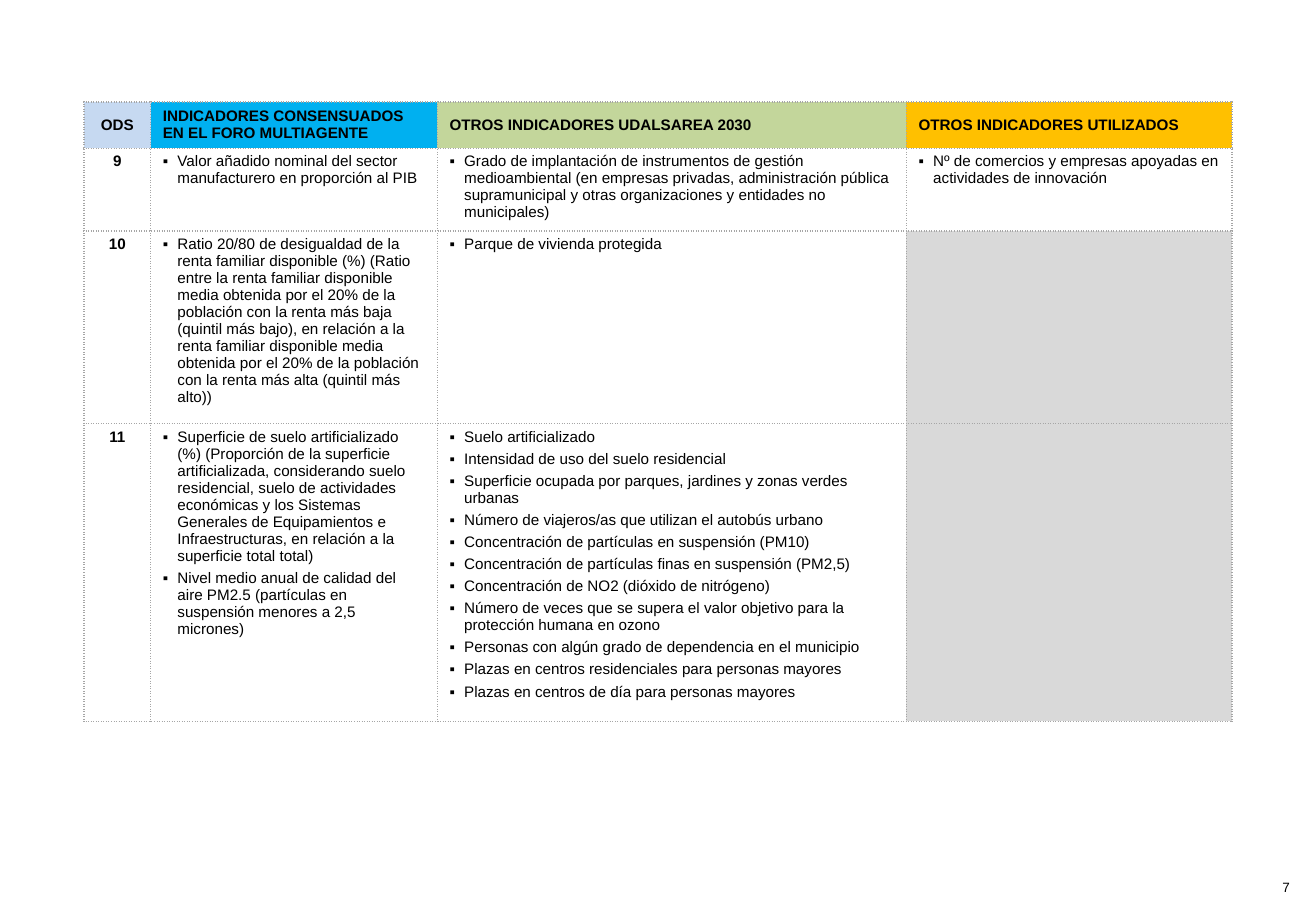
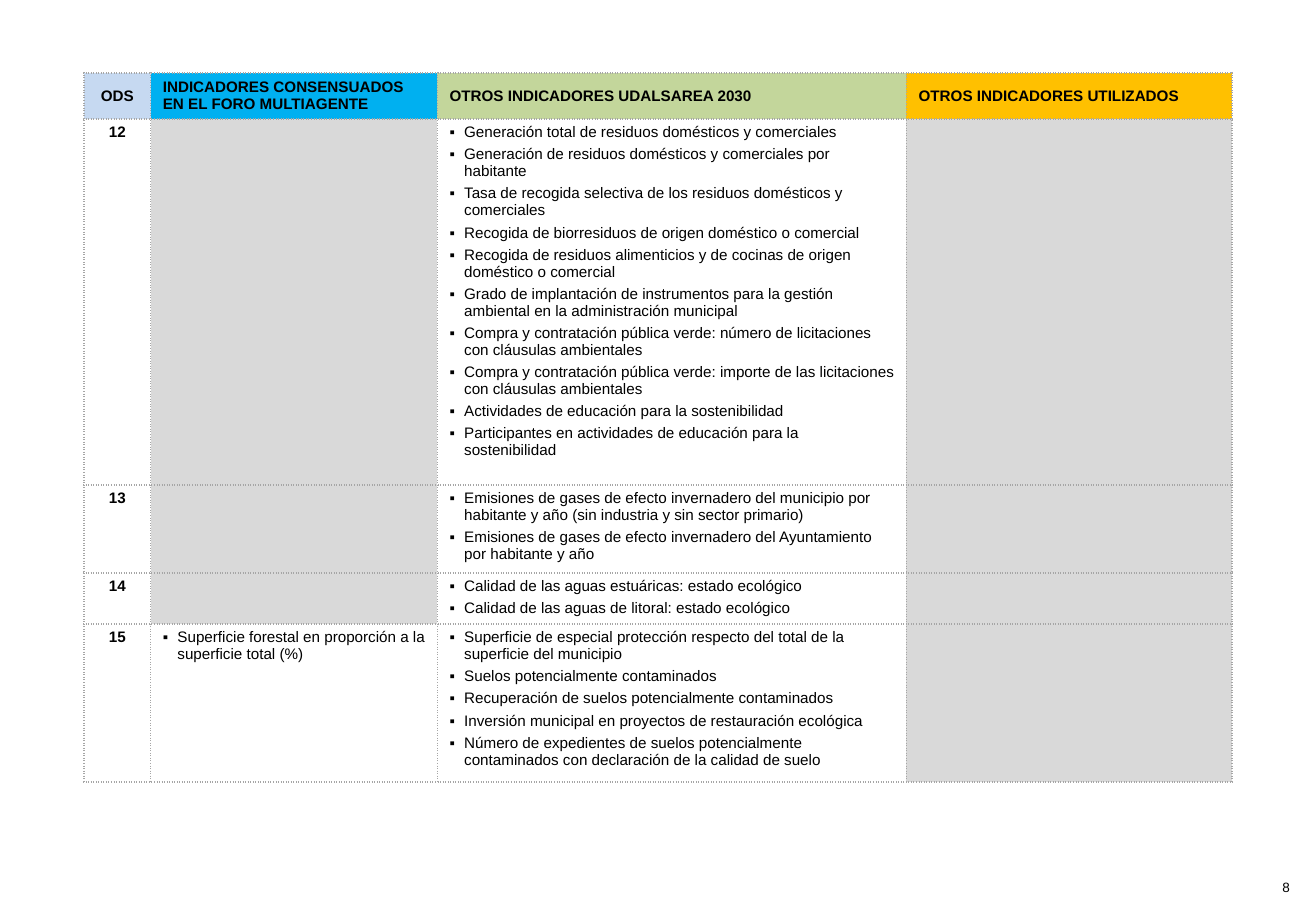
from dataclasses import dataclass

from lxml import etree
from pptx import Presentation
from pptx.dml.color import RGBColor
from pptx.enum.text import MSO_ANCHOR, PP_ALIGN
from pptx.oxml.ns import qn
from pptx.util import Inches, Pt

MIDDLE, TOP = MSO_ANCHOR.MIDDLE, MSO_ANCHOR.TOP
CENTER, LEFT = PP_ALIGN.CENTER, PP_ALIGN.LEFT


@dataclass(frozen=True)
class Theme:
    font: str = "Arial"
    text: str = "000000"
    border: str = "A6A6A6"
    empty: str = "D9D9D9"
    body_size: int = 9
    footer_size: int = 8
    space_after: int = 3
    border_width: int = 1


@dataclass(frozen=True)
class Column:
    title: str
    width: float
    fill: str
    align: PP_ALIGN = LEFT


@dataclass(frozen=True)
class Goal:
    number: int
    height: float
    agreed: tuple[str, ...] = ()
    network: tuple[str, ...] = ()
    other: tuple[str, ...] = ()


@dataclass(frozen=True)
class GoalPage:
    number: int
    top: float
    goals: tuple[Goal, ...]


THEME = Theme()
TABLE_LEFT = 0.69
HEADER_HEIGHT = 0.36
BULLET_INDENT = Inches(0.12)

COLUMNS = (
    Column("ODS", 0.55, "C6D9F1", CENTER),
    Column("INDICADORES CONSENSUADOS EN EL FORO MULTIAGENTE", 2.36, "00B0F0"),
    Column("OTROS INDICADORES UDALSAREA 2030", 3.86, "C3D69B"),
    Column("OTROS INDICADORES UTILIZADOS", 2.68, "FFC000"),
)

PAGES = (
    GoalPage(7, 0.84, (
        Goal(
            9, 0.63,
            agreed=("Valor añadido nominal del sector manufacturero en proporción al PIB",),
            network=(
                "Grado de implantación de instrumentos de gestión medioambiental "
                "(en empresas privadas, administración pública supramunicipal y otras "
                "organizaciones y entidades no municipales)",
            ),
            other=("Nº de comercios y empresas apoyadas en actividades de innovación",),
        ),
        Goal(
            10, 1.48,
            agreed=(
                "Ratio 20/80 de desigualdad de la renta familiar disponible (%) "
                "(Ratio entre la renta familiar disponible media obtenida por el 20% de la "
                "población con la renta más baja (quintil más bajo), en relación a la renta "
                "familiar disponible media obtenida por el 20% de la población con la renta "
                "más alta (quintil más alto))",
            ),
            network=("Parque de vivienda protegida",),
        ),
        Goal(
            11, 2.31,
            agreed=(
                "Superficie de suelo artificializado (%) (Proporción de la superficie "
                "artificializada, considerando suelo residencial, suelo de actividades "
                "económicas y los Sistemas Generales de Equipamientos e Infraestructuras, "
                "en relación a la superficie total total)",
                "Nivel medio anual de calidad del aire PM2.5 (partículas en suspensión "
                "menores a 2,5 micrones)",
            ),
            network=(
                "Suelo artificializado",
                "Intensidad de uso del suelo residencial",
                "Superficie ocupada por parques, jardines y zonas verdes urbanas",
                "Número de viajeros/as que utilizan el autobús urbano",
                "Concentración de partículas en suspensión (PM10)",
                "Concentración de partículas finas en suspensión (PM2,5)",
                "Concentración de NO2 (dióxido de nitrógeno)",
                "Número de veces que se supera el valor objetivo para la protección "
                "humana en ozono",
                "Personas con algún grado de dependencia en el municipio",
                "Plazas en centros residenciales para personas mayores",
                "Plazas en centros de día para personas mayores",
            ),
        ),
    )),
    GoalPage(8, 0.6, (
        Goal(
            12, 2.83,
            network=(
                "Generación total de residuos domésticos y comerciales",
                "Generación de residuos domésticos y comerciales por habitante",
                "Tasa de recogida selectiva de los residuos domésticos y comerciales",
                "Recogida de biorresiduos de origen doméstico o comercial",
                "Recogida de residuos alimenticios y de cocinas de origen doméstico o comercial",
                "Grado de implantación de instrumentos para la gestión ambiental en la "
                "administración municipal",
                "Compra y contratación pública verde: número de licitaciones con "
                "cláusulas ambientales",
                "Compra y contratación pública verde: importe de las licitaciones con "
                "cláusulas ambientales",
                "Actividades de educación para la sostenibilidad",
                "Participantes en actividades de educación para la sostenibilidad",
            ),
        ),
        Goal(
            13, 0.68,
            network=(
                "Emisiones de gases de efecto invernadero del municipio por habitante y año "
                "(sin industria y sin sector primario)",
                "Emisiones de gases de efecto invernadero del Ayuntamiento por habitante y año",
            ),
        ),
        Goal(
            14, 0.4,
            network=(
                "Calidad de las aguas estuáricas: estado ecológico",
                "Calidad de las aguas de litoral: estado ecológico",
            ),
        ),
        Goal(
            15, 1.22,
            agreed=("Superficie forestal en proporción a la superficie total (%)",),
            network=(
                "Superficie de especial protección respecto del total de la superficie "
                "del municipio",
                "Suelos potencialmente contaminados",
                "Recuperación de suelos potencialmente contaminados",
                "Inversión municipal en proyectos de restauración ecológica",
                "Número de expedientes de suelos potencialmente contaminados con "
                "declaración de la calidad de suelo",
            ),
        ),
    )),
)


def style_paragraph(paragraph, size: int, bold: bool = False, align: PP_ALIGN = LEFT) -> None:
    paragraph.alignment = align
    font = paragraph.font
    font.name = THEME.font
    font.size = Pt(size)
    font.bold = bold
    font.color.rgb = RGBColor.from_string(THEME.text)


def add_bullet(paragraph) -> None:
    properties = paragraph._p.get_or_add_pPr()
    properties.set("marL", str(BULLET_INDENT))
    properties.set("indent", str(-BULLET_INDENT))
    etree.SubElement(properties, qn("a:buFont"), typeface=THEME.font)
    etree.SubElement(properties, qn("a:buChar"), char="▪")
    paragraph.space_after = Pt(THEME.space_after)


def add_borders(cell) -> None:
    properties = cell._tc.get_or_add_tcPr()
    for side in ("lnL", "lnR", "lnT", "lnB"):
        line = etree.SubElement(properties, qn(f"a:{side}"), w=str(Pt(THEME.border_width)))
        fill = etree.SubElement(line, qn("a:solidFill"))
        etree.SubElement(fill, qn("a:srgbClr"), val=THEME.border)
        etree.SubElement(line, qn("a:prstDash"), val="sysDot")


def format_cell(cell, fill: str | None = None, anchor: MSO_ANCHOR = TOP) -> None:
    add_borders(cell)
    cell.margin_left = cell.margin_right = Inches(0.1)
    cell.margin_top = cell.margin_bottom = Inches(0.04)
    cell.vertical_anchor = anchor
    if fill:
        cell.fill.solid()
        cell.fill.fore_color.rgb = RGBColor.from_string(fill)
    else:
        cell.fill.background()


def write_label(cell, text: str, align: PP_ALIGN) -> None:
    cell.text = text
    style_paragraph(cell.text_frame.paragraphs[0], THEME.body_size, True, align)


def write_indicators(cell, indicators: tuple[str, ...]) -> None:
    format_cell(cell, None if indicators else THEME.empty)
    cell.text = "\n".join(indicators)
    for paragraph in cell.text_frame.paragraphs:
        if indicators:
            add_bullet(paragraph)
        style_paragraph(paragraph, THEME.body_size)


def add_goal_table(page, top: float, goals: tuple[Goal, ...]) -> None:
    heights = [HEADER_HEIGHT, *(goal.height for goal in goals)]
    table = page.shapes.add_table(
        len(heights), len(COLUMNS), Inches(TABLE_LEFT), Inches(top),
        Inches(sum(column.width for column in COLUMNS)), Inches(sum(heights)),
    ).table
    table.first_row = table.horz_banding = False
    for row, height in zip(table.rows, heights):
        row.height = Inches(height)
    for index, column in enumerate(COLUMNS):
        table.columns[index].width = Inches(column.width)
        header = table.cell(0, index)
        format_cell(header, column.fill, MIDDLE)
        write_label(header, column.title, column.align)
    for row_index, goal in enumerate(goals, start=1):
        number = table.cell(row_index, 0)
        format_cell(number)
        write_label(number, str(goal.number), CENTER)
        for index, indicators in enumerate((goal.agreed, goal.network, goal.other), start=1):
            write_indicators(table.cell(row_index, index), indicators)


def add_page_number(page, number: int) -> None:
    box = page.shapes.add_textbox(Inches(10.35), Inches(7.21), Inches(0.47), Inches(0.19))
    frame = box.text_frame
    frame.word_wrap = True
    frame.margin_left = frame.margin_right = frame.margin_top = frame.margin_bottom = 0
    frame.vertical_anchor = MIDDLE
    frame.text = str(number)
    style_paragraph(frame.paragraphs[0], THEME.footer_size, align=CENTER)


def main() -> None:
    deck = Presentation()
    deck.slide_width, deck.slide_height = Inches(10.83), Inches(7.5)
    blank = deck.slide_layouts[6]
    for goal_page in PAGES:
        page = deck.slides.add_slide(blank)
        add_page_number(page, goal_page.number)
        add_goal_table(page, goal_page.top, goal_page.goals)
    deck.save("out.pptx")


if __name__ == "__main__":
    main()
